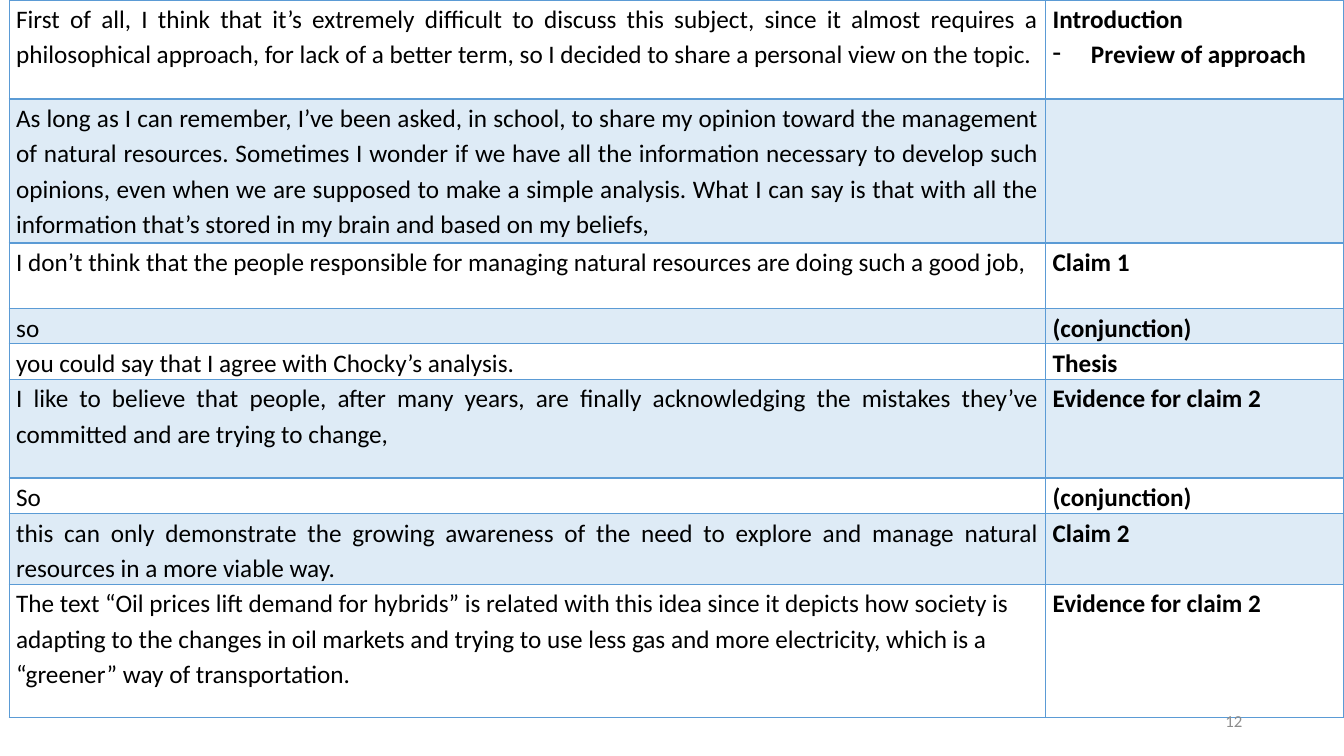
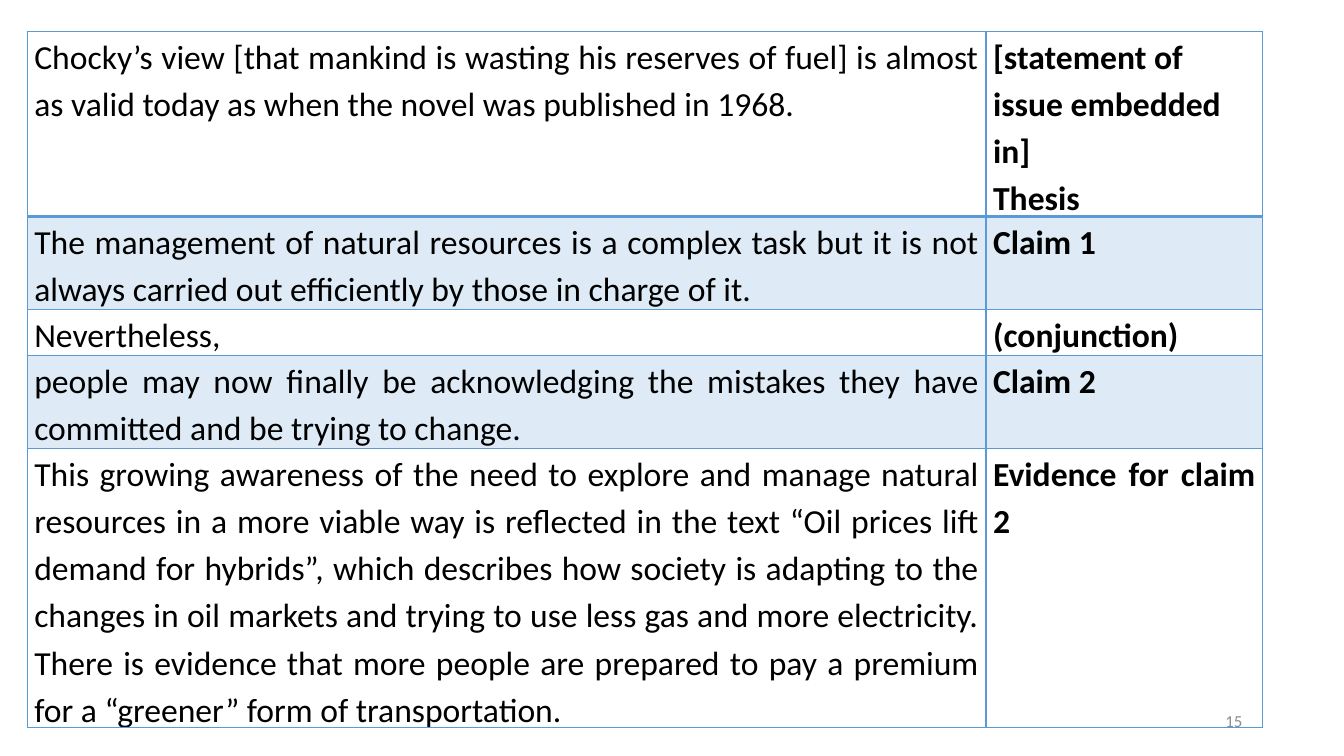
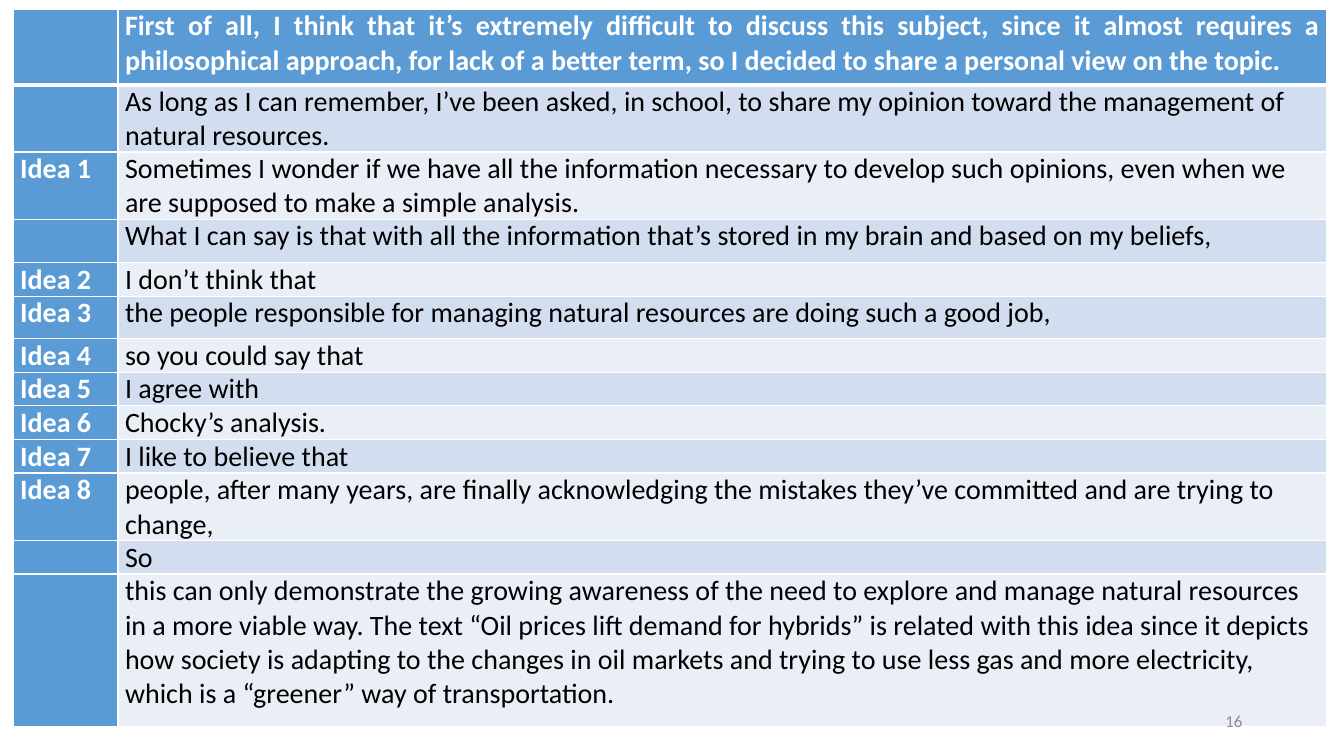
"""Build three slides of tables that label the parts of an essay."""
import pptx
import pptx.util
import pptx.dml.color
import pptx.enum.text
import pptx.oxml
import pptx.oxml.ns

INK = {"blue": "5B9BD5", "white": "FFFFFF", "black": "000000", "grey": "8C8C8C",
       "dark": "D2DEEF", "light": "EAEFF7"}
FONT = "Calibri"
ALIGN = pptx.enum.text.PP_ALIGN
deck = pptx.Presentation()
deck.slide_width = pptx.util.Inches(13.33)
deck.slide_height = pptx.util.Inches(7.5)
COL = deck.slide_width / 100
ROW = deck.slide_height / 100
RAGGED = ("Preview", "[statement", "The text")


def style(para, size, ink, bold=False):
    for run in para.runs:
        run.font.name = FONT
        run.font.size = pptx.util.Pt(size)
        run.font.bold = bold
        run.font.color.rgb = pptx.dml.color.RGBColor.from_string(INK[ink])


def add_xml(node, tag, body):
    space = pptx.oxml.ns.nsdecls("a")
    node.append(pptx.oxml.parse_xml(f"<a:{tag} {space} {body}</a:{tag}>"))


PAGES = [
    {"num": "12", "at": (0.68, 0), "size": 18, "label": 1, "solid": False,
     "edge": "blue", "thick": 2, "cols": [77.12, 22.2],
     "rows": [13.07, 19.07, 8.67, 4.13, 4.13, 13.07, 4.13, 8.67, 17.6],
     "text": [
         ("First of all, I think that it’s extremely difficult to discuss this subject, since it "
          "almost requires a philosophical approach, for lack of a better term, so I decided to "
          "share a personal view on the topic.", "Introduction\nPreview of approach"),
         ("As long as I can remember, I’ve been asked, in school, to share my opinion toward the "
          "management of natural resources. Sometimes I wonder if we have all the information "
          "necessary to develop such opinions, even when we are supposed to make a simple "
          "analysis. What I can say is that with all the information that’s stored in my brain "
          "and based on my beliefs,", ""),
         ("I don’t think that the people responsible for managing natural resources are doing "
          "such a good job,", "Claim 1"),
         ("so", "(conjunction)"),
         ("you could say that I agree with Chocky’s analysis.", "Thesis"),
         ("I like to believe that people, after many years, are finally acknowledging the "
          "mistakes they’ve committed and are trying to change,", "Evidence for claim 2"),
         ("So", "(conjunction)"),
         ("this can only demonstrate the growing awareness of the need to explore and manage "
          "natural resources in a more viable way.", "Claim 2"),
         ("The text “Oil prices lift demand for hybrids” is related with this idea since it "
          "depicts how society is adapting to the changes in oil markets and trying to use less "
          "gas and more electricity, which is a “greener” way of transportation.",
          "Evidence for claim 2")]},
    {"num": "15", "at": (2.03, 4.13), "size": 24, "label": 1, "solid": False,
     "edge": "blue", "thick": 2, "cols": [71.34, 20.56],
     "rows": [24.53, 12, 5.87, 12, 36.93],
     "text": [
         ("Chocky’s view [that mankind is wasting his reserves of fuel] is almost as valid today "
          "as when the novel was published in 1968.",
          "[statement of issue embedded in]\nThesis"),
         ("The management of natural resources is a complex task but it is not always carried "
          "out efficiently by those in charge of it.", "Claim 1"),
         ("Nevertheless,", "(conjunction)"),
         ("people may now finally be acknowledging the mistakes they have committed and be "
          "trying to change.", "Claim 2"),
         ("This growing awareness of the need to explore and manage natural resources in a more "
          "viable way is reflected in the text “Oil prices lift demand for hybrids”, which "
          "describes how society is adapting to the changes in oil markets and trying to use "
          "less gas and more electricity. There is evidence that more people are prepared to "
          "pay a premium for a “greener” form of transportation.", "Evidence for claim 2")]},
    {"num": "16", "at": (0.98, 1.2), "size": 20, "label": 0, "solid": True,
     "edge": "white", "thick": 3, "cols": [7.8, 89.95],
     "rows": [10, 8, 8, 5.73, 4, 5.6, 4, 4, 4, 4, 5.73, 4, 20.13],
     "text": [
         ("", "First of all, I think that it’s extremely difficult to discuss this subject, since "
          "it almost requires a philosophical approach, for lack of a better term, so I decided "
          "to share a personal view on the topic."),
         ("", "As long as I can remember, I’ve been asked, in school, to share my opinion toward "
          "the management of natural resources."),
         ("Idea 1", "Sometimes I wonder if we have all the information necessary to develop such "
          "opinions, even when we are supposed to make a simple analysis."),
         ("", "What I can say is that with all the information that’s stored in my brain and "
          "based on my beliefs,"),
         ("Idea 2", "I don’t think that"),
         ("Idea 3", "the people responsible for managing natural resources are doing such a good "
          "job,"),
         ("Idea 4", "so you could say that"),
         ("Idea 5", "I agree with"),
         ("Idea 6", "Chocky’s analysis."),
         ("Idea 7", "I like to believe that"),
         ("Idea 8", "people, after many years, are finally acknowledging the mistakes they’ve "
          "committed and are trying to change,"),
         ("", "So"),
         ("", "this can only demonstrate the growing awareness of the need to explore and manage "
          "natural resources in a more viable way. The text “Oil prices lift demand for hybrids” "
          "is related with this idea since it depicts how society is adapting to the changes in "
          "oil markets and trying to use less gas and more electricity, which is a “greener” way "
          "of transportation.")]},
]

for page in PAGES:
    slide = deck.slides.add_slide(deck.slide_layouts[6])
    left, top = page["at"]
    solid = page["solid"]
    grid = slide.shapes.add_table(
        len(page["rows"]), len(page["cols"]), int(left * COL), int(top * ROW),
        int(sum(page["cols"]) * COL), int(sum(page["rows"]) * ROW)).table
    grid.first_row = grid.horz_banding = False
    for col, width in zip(grid.columns, page["cols"]):
        col.width = int(width * COL)
    for row, height in zip(grid.rows, page["rows"]):
        row.height = int(height * ROW)

    for r, line in enumerate(page["text"]):
        for c, words in enumerate(line):
            cell = grid.cell(r, c)
            cell.margin_left = cell.margin_right = pptx.util.Inches(0.07)
            cell.margin_top = cell.margin_bottom = 0
            label = c == page["label"]
            head = solid and (label or r == 0)

            cell.text_frame.text = words
            for para in cell.text_frame.paragraphs:
                loose = para.text.startswith(RAGGED) or (solid and r > 0)
                para.alignment = ALIGN.LEFT if loose else ALIGN.JUSTIFY
                para.line_spacing = 1.0 if solid else 1.15
                style(para, page["size"], "white" if head else "black", label or head)
                if para.text.startswith("Preview"):
                    props = para._p.get_or_add_pPr()
                    props.set("marL", str(pptx.util.Inches(0.38)))
                    props.set("indent", str(-pptx.util.Inches(0.38)))
                    add_xml(props, "buChar", 'char="-">')

            props = cell._tc.get_or_add_tcPr()
            for side in "LRTB":
                heavy = (r, side) in ((0, "B"), (1, "T"))
                wide = pptx.util.Pt(page["thick"] if heavy else 1)
                add_xml(props, "ln" + side, f'w="{wide}"><a:solidFill><a:srgbClr '
                        f'val="{INK[page["edge"]]}"/></a:solidFill>')

            if not solid and r % 2 == 0:
                cell.fill.background()
                continue
            shade = "blue" if head or not solid else "dark" if r % 2 else "light"
            cell.fill.solid()
            cell.fill.fore_color.rgb = pptx.dml.color.RGBColor.from_string(INK[shade])
            if not solid:
                add_xml(props.find(".//" + pptx.oxml.ns.qn("a:tcPr") + "/x")
                        or props.findall(pptx.oxml.ns.qn("a:solidFill"))[0][0],
                        "alpha", 'val="20000">')

    box = slide.shapes.add_textbox(int(70.67 * COL), int(92.67 * ROW),
                                   int(22.5 * COL), int(5.33 * ROW))
    frame = box.text_frame
    frame.word_wrap = True
    frame.vertical_anchor = pptx.enum.text.MSO_ANCHOR.MIDDLE
    frame.text = page["num"]
    frame.paragraphs[0].alignment = ALIGN.RIGHT
    style(frame.paragraphs[0], 12, "grey")

deck.save("out.pptx")
